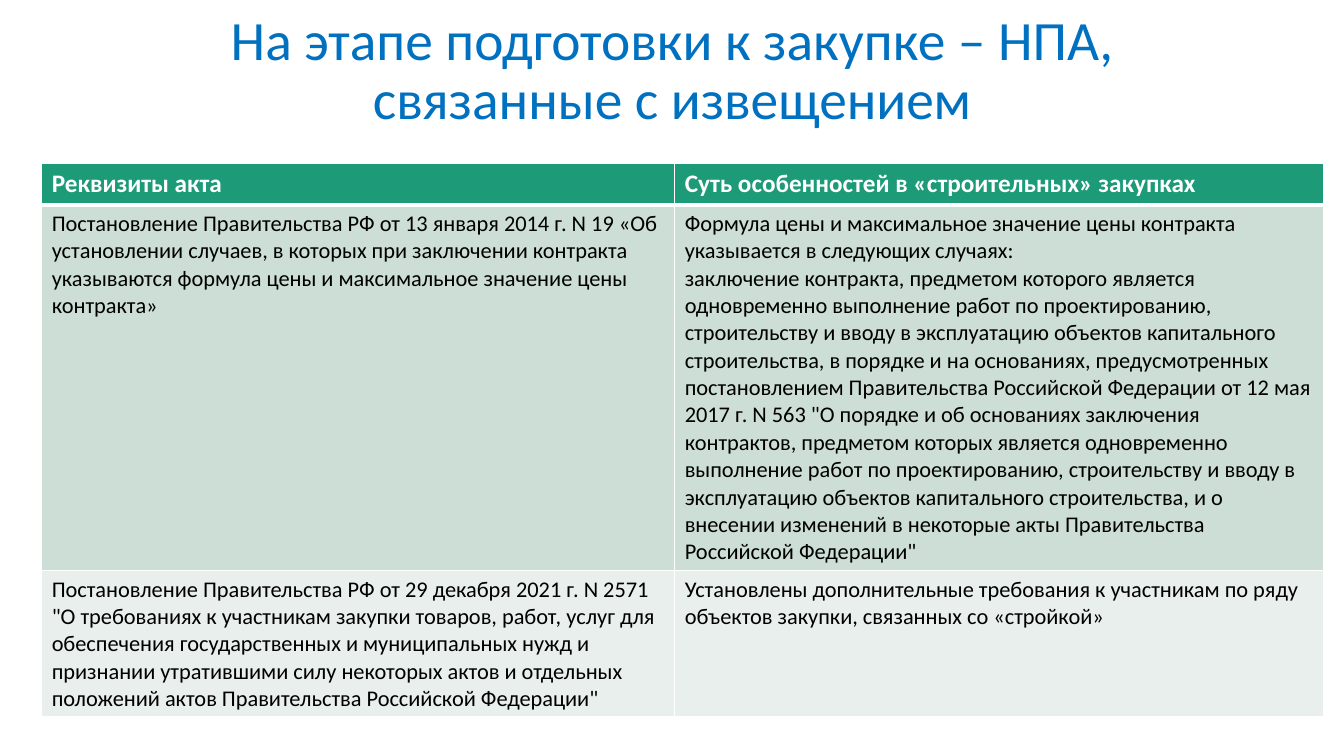
"""Build a slide on the regulations tied to a procurement notice."""
from dataclasses import dataclass

from lxml import etree
from pptx import Presentation
from pptx.dml.color import RGBColor
from pptx.enum.text import MSO_ANCHOR, PP_ALIGN
from pptx.oxml.ns import qn
from pptx.util import Inches, Length, Pt

MIDDLE = MSO_ANCHOR.MIDDLE
TOP = MSO_ANCHOR.TOP
CENTER = PP_ALIGN.CENTER
LEFT = PP_ALIGN.LEFT

TITLE_BLUE = RGBColor(0x00, 0x70, 0xC0)
HEADER_GREEN = RGBColor(0x1D, 0x9A, 0x78)
BAND_DARK = RGBColor(0xCD, 0xDE, 0xD6)
BAND_LIGHT = RGBColor(0xE8, 0xEF, 0xEC)
WHITE = RGBColor(0xFF, 0xFF, 0xFF)
BLACK = RGBColor(0x00, 0x00, 0x00)

PAGE_WIDTH = Inches(13.33)
PAGE_HEIGHT = Inches(7.5)
COLUMN_PERCENTS = (47.1, 48.3)

TITLE = "На этапе подготовки к закупке – НПА, связанные с извещением"
TITLE_FORMAT = {"name": "Calibri", "size": Pt(39.6), "bold": False}
HEADER_FORMAT = {"name": "Calibri", "size": Pt(18), "bold": True}
BODY_FORMAT = {"name": "Calibri", "size": Pt(16), "bold": False}


@dataclass(frozen=True)
class TableRow:
    """One table row: height in percent of the page, look and cell paragraphs."""

    height: float
    fill: RGBColor
    color: RGBColor
    font: dict
    cells: tuple
    top_line: float = 1
    bottom_line: float = 1


ROWS = (
    TableRow(5.5, HEADER_GREEN, WHITE, HEADER_FORMAT, (
        ("Реквизиты акта",),
        ("Суть особенностей в «строительных» закупках",),
    ), bottom_line=3),
    TableRow(48.4, BAND_DARK, BLACK, BODY_FORMAT, (
        ("Постановление Правительства РФ от 13 января 2014 г. N 19 «Об "
         "установлении случаев, в которых при заключении контракта "
         "указываются формула цены и максимальное значение цены контракта»",),
        ("Формула цены и максимальное значение цены контракта указывается "
         "в следующих случаях:",
         "заключение контракта, предметом которого является одновременно "
         "выполнение работ по проектированию, строительству и вводу в "
         "эксплуатацию объектов капитального строительства, в порядке и на "
         "основаниях, предусмотренных постановлением Правительства "
         "Российской Федерации от 12 мая 2017 г. N 563 \"О порядке и об "
         "основаниях заключения контрактов, предметом которых является "
         "одновременно выполнение работ по проектированию, строительству и "
         "вводу в эксплуатацию объектов капитального строительства, и о "
         "внесении изменений в некоторые акты Правительства Российской "
         "Федерации\""),
    ), top_line=3),
    TableRow(19.3, BAND_LIGHT, BLACK, BODY_FORMAT, (
        ("Постановление Правительства РФ от 29 декабря 2021 г. N 2571",
         "\"О требованиях к участникам закупки товаров, работ, услуг для "
         "обеспечения государственных и муниципальных нужд и признании "
         "утратившими силу некоторых актов и отдельных положений актов "
         "Правительства Российской Федерации\""),
        ("Установлены дополнительные требования к участникам по ряду "
         "объектов закупки, связанных со «стройкой»",),
    )),
)


def across(percent: float) -> Length:
    """Return a share of the page width."""
    return Length(round(PAGE_WIDTH * percent / 100))


def down(percent: float) -> Length:
    """Return a share of the page height."""
    return Length(round(PAGE_HEIGHT * percent / 100))


def write(frame, texts: tuple, font: dict, color: RGBColor, align) -> None:
    """Write one formatted paragraph per text."""
    for index, text in enumerate(texts):
        para = frame.paragraphs[0] if index == 0 else frame.add_paragraph()
        para.alignment = align
        span = para.add_run()
        span.text = text
        for name, value in font.items():
            setattr(span.font, name, value)
        span.font.color.rgb = color


def add_borders(cell, widths: dict) -> None:
    """Give a cell white borders of the given widths in points."""
    properties = cell._tc.get_or_add_tcPr()
    for side, width in widths.items():
        line = etree.SubElement(properties, qn(f"a:ln{side}"), w=str(Pt(width)))
        solid = etree.SubElement(line, qn("a:solidFill"))
        etree.SubElement(solid, qn("a:srgbClr"), val=str(WHITE))


def add_title(page) -> None:
    """Place the centred heading."""
    box = page.shapes.add_textbox(across(6.9), down(6.27), across(86.25), down(6.53))
    frame = box.text_frame
    settings = {"word_wrap": True, "vertical_anchor": MIDDLE,
                "margin_left": across(3), "margin_right": across(3)}
    for name, value in settings.items():
        setattr(frame, name, value)
    write(frame, (TITLE,), TITLE_FORMAT, TITLE_BLUE, CENTER)
    frame.paragraphs[0].line_spacing = 0.9


def add_acts_table(page) -> None:
    """Place the table of legal acts."""
    table = page.shapes.add_table(
        len(ROWS), len(COLUMN_PERCENTS), across(3.1), down(21.6),
        across(sum(COLUMN_PERCENTS)), down(sum(row.height for row in ROWS)),
    ).table
    for column, percent in zip(table.columns, COLUMN_PERCENTS):
        column.width = across(percent)
    for table_row, row in zip(table.rows, ROWS):
        table_row.height = down(row.height)
        for cell, texts in zip(table_row.cells, row.cells):
            add_borders(cell, {"L": 1, "R": 1, "T": row.top_line, "B": row.bottom_line})
            cell.fill.solid()
            cell.fill.fore_color.rgb = row.fill
            cell.vertical_anchor = TOP
            write(cell.text_frame, texts, row.font, row.color, LEFT)


def main() -> None:
    """Build and save the deck."""
    deck = Presentation()
    deck.slide_width = PAGE_WIDTH
    deck.slide_height = PAGE_HEIGHT
    page = deck.slides.add_slide(deck.slide_layouts[6])
    add_title(page)
    add_acts_table(page)
    deck.save("out.pptx")


if __name__ == "__main__":
    main()
